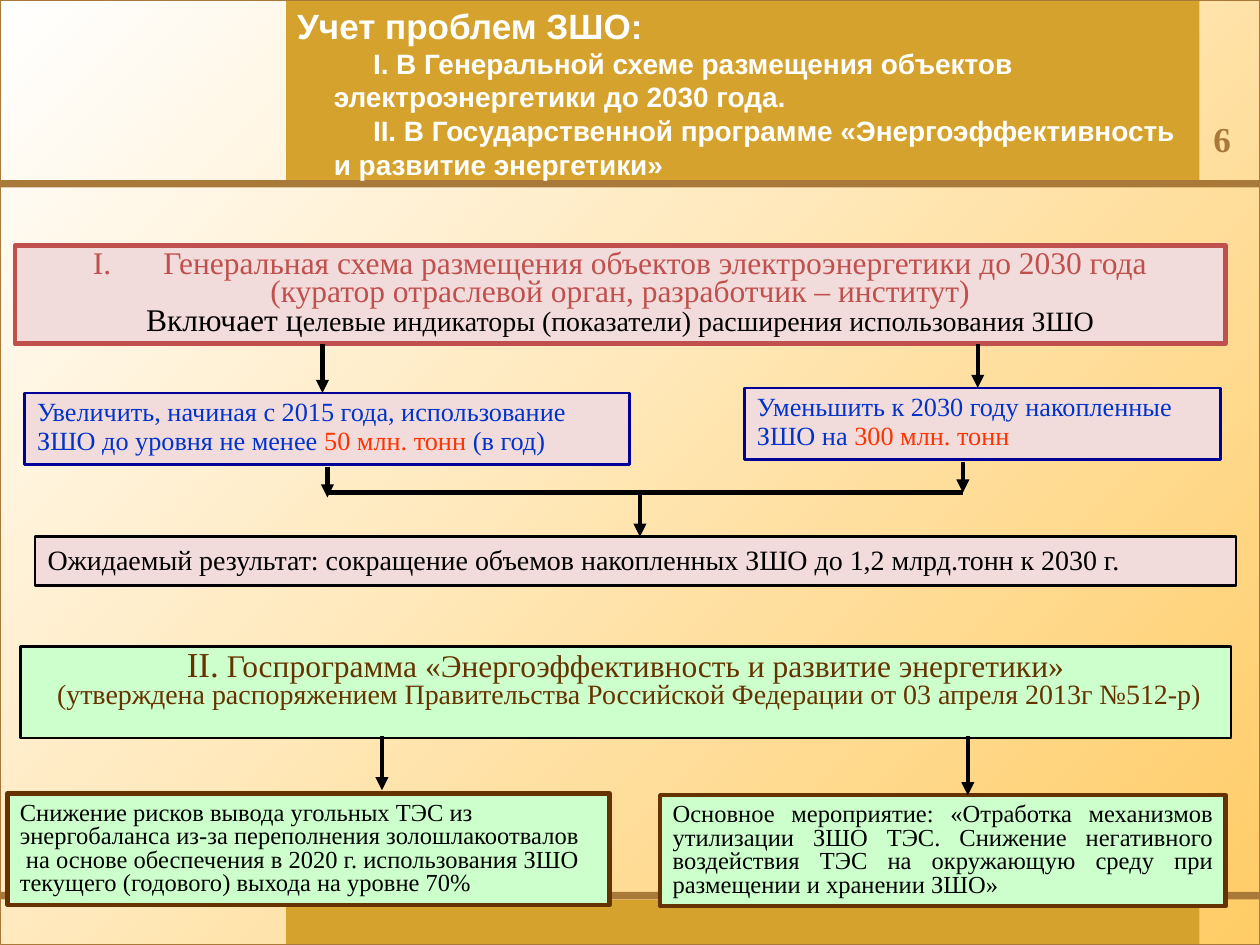
from lxml import etree
from pptx import Presentation
from pptx.dml.color import RGBColor
from pptx.enum.shapes import MSO_CONNECTOR, MSO_SHAPE
from pptx.enum.text import MSO_ANCHOR, MSO_AUTO_SIZE, PP_ALIGN
from pptx.oxml.ns import qn
from pptx.util import Cm, Pt

RECT = MSO_SHAPE.RECTANGLE
LINE = MSO_CONNECTOR.STRAIGHT
TOP, MID = MSO_ANCHOR.TOP, MSO_ANCHOR.MIDDLE
LEFT, MIDST, EVEN = PP_ALIGN.LEFT, PP_ALIGN.CENTER, PP_ALIGN.JUSTIFY

WHITE = RGBColor(0xFF, 0xFF, 0xFF)
BLACK = RGBColor(0x00, 0x00, 0x00)
CREAM = RGBColor(0xFF, 0xCC, 0x66)
GOLD = RGBColor(0xD5, 0xA3, 0x2D)
BRONZE = RGBColor(0xA8, 0x79, 0x38)
PINK = RGBColor(0xF2, 0xDC, 0xDB)
RED = RGBColor(0xC0, 0x50, 0x4D)
NAVY = RGBColor(0x00, 0x00, 0x99)
BLUE = RGBColor(0x00, 0x33, 0xCC)
FLAME = RGBColor(0xFF, 0x33, 0x00)
MINT = RGBColor(0xCC, 0xFF, 0xCC)
BROWN = RGBColor(0x66, 0x33, 0x00)
SERIF = "Times New Roman"

deck = Presentation()
deck.slide_width, deck.slide_height = Cm(25.4), Cm(19.05)
slide = deck.slides.add_slide(deck.slide_layouts[5])
shapes = slide.shapes

back = slide.background.fill
back.gradient()
back.gradient_angle = 315
for stop, hue in zip(back.gradient_stops, (WHITE, CREAM)):
    stop.color.rgb = hue


def add_box(x, y, w, h, fill=None, edge=None, width=0):
    box = shapes.add_shape(RECT, Cm(x), Cm(y), Cm(w), Cm(h))
    box.shadow.inherit = False
    if fill is None:
        box.fill.background()
    else:
        box.fill.solid()
        box.fill.fore_color.rgb = fill
    if edge is None:
        box.line.fill.background()
    else:
        box.line.color.rgb = edge
        box.line.width = Pt(width)
    return box


def add_line(x, y, x2, y2, head=True):
    line = shapes.add_connector(LINE, Cm(x), Cm(y), Cm(x2), Cm(y2))
    line.line.color.rgb = BLACK
    line.line.width = Pt(2.5)
    if head:
        tail = etree.SubElement(line.line._get_or_add_ln(), qn("a:tailEnd"))
        tail.set("type", "triangle")
    etree.SubElement(line._element.spPr, qn("a:effectLst"))


for x, y, w, h, fill in (
    (5.77, 18.14, 18.41, 0.91, GOLD),
    (5.77, 0, 18.41, 3.63, GOLD),
    (0, 3.63, 25.4, 0.15, BRONZE),
    (0, 17.98, 25.4, 0.15, BRONZE),
):
    add_box(x, y, w, h, fill)
add_box(0, 0, 25.4, 19.05, edge=BRONZE, width=0.5)

title = shapes.title
shapes._spTree.append(title._element)
title.left, title.top = Cm(5.79), Cm(0)
title.width, title.height = Cm(18.57), Cm(3.73)
frame = title.text_frame
frame.auto_size = MSO_AUTO_SIZE.NONE
frame.vertical_anchor = MID
frame.margin_left = frame.margin_right = Cm(0.2)
frame.margin_top = frame.margin_bottom = Cm(0.1)
frame.text = "\n".join((
    "Учет проблем ЗШО:",
    "I. В Генеральной схеме размещения объектов электроэнергетики до 2030 года.",
    "II. В Государственной программе «Энергоэффективность и развитие энергетики»",
))
for rank, para in enumerate(frame.paragraphs):
    para.alignment = LEFT
    props = para._p.get_or_add_pPr()
    props.set("marL", str(Cm(0.74)))
    props.set("indent", str(Cm(0.79 if rank else -0.74)))
    font = para.font
    font.name, font.bold = "Arial", True
    font.size = Pt(16 if rank else 20)
    font.color.rgb = WHITE
para.space_after = Pt(6)

boxes = (
    ((0.3, 4.95, 24.41, 1.98), PINK, RED, 2.5, TOP, 0.75, (
        (MIDST, 18, [("Генеральная схема размещения объектов электроэнергетики до 2030 года", RED)]),
        (MIDST, 18, [("(куратор отраслевой орган, разработчик – институт)", RED)]),
        (MIDST, 18, [
            ("Включает ц", BLACK),
            ("елевые индикаторы (показатели) расширения использования ЗШО", BLACK, 16),
        ]),
    )),
    ((0.5, 7.92, 12.19, 1.45), PINK, NAVY, 1.5, TOP, 0.9, (
        (LEFT, 15, [
            ("Увеличить, начиная с 2015 года, использование ЗШО до уровня не менее", BLUE),
            (" 50 млн. тонн ", FLAME),
            ("(в год)", BLUE),
        ]),
    )),
    ((15.01, 7.82, 9.6, 1.45), PINK, NAVY, 1.5, TOP, 0.9, (
        (LEFT, 15, [
            ("Уменьшить к 2030 году накопленные ЗШО на ", BLUE),
            ("300 млн. тонн", FLAME),
        ]),
    )),
    ((0.71, 10.82, 24.21, 0.99), PINK, BLACK, 1.5, TOP, 1.0, (
        (LEFT, 16, [("Ожидаемый результат: сокращение объемов накопленных ЗШО до 1,2 млрд.тонн к 2030 г.", BLACK)]),
    )),
    ((0.41, 13.03, 24.41, 1.85), MINT, BLACK, 1.5, TOP, 0.75, (
        (MIDST, 18, [
            ("II.", BROWN, 20),
            (" Госпрограмма «Энергоэффективность и развитие энергетики»", BROWN),
        ]),
        (MIDST, 16, [(" (утверждена распоряжением Правительства Российской Федерации от 03 апреля 2013г №512-р)", BROWN)]),
    )),
    ((0.15, 16, 12.14, 2.24), MINT, BROWN, 2.5, MID, 0.8, (
        (LEFT, 14, [("Снижение рисков вывода угольных ТЭС из", BLACK)]),
        (EVEN, 14, [("энергобаланса из-за переполнения золошлакоотвалов", BLACK)]),
        (LEFT, 14, [(" на основе обеспечения в 2020 г. использования ЗШО", BLACK)]),
        (LEFT, 14, [("текущего (годового) выхода на уровне 70%", BLACK)]),
    )),
    ((13.31, 16.03, 11.4, 2.24), MINT, BROWN, 2.5, MID, 0.8, (
        (EVEN, 14, [(
            "Основное мероприятие: «Отработка механизмов утилизации ЗШО ТЭС. "
            "Снижение негативного воздействия ТЭС на окружающую среду при "
            "размещении и хранении ЗШО»", BLACK)]),
    )),
)
for place, fill, edge, width, anchor, pitch, paras in boxes:
    frame = add_box(*place, fill, edge, width).text_frame
    frame.word_wrap = True
    frame.vertical_anchor = anchor
    for rank, (align, size, runs) in enumerate(paras):
        para = frame.add_paragraph() if rank else frame.paragraphs[0]
        para.alignment = align
        para.line_spacing = pitch
        if edge == RED and rank == 0:
            props = para._p.get_or_add_pPr()
            props.set("marL", str(Cm(1.42)))
            props.set("indent", str(Cm(-1.42)))
            mark = etree.SubElement(props, qn("a:buAutoNum"))
            mark.set("type", "romanUcPeriod")
        para.font.name = SERIF
        para.font.size = Pt(size)
        for words, hue, *other in runs:
            run = para.add_run()
            run.text = words
            run.font.color.rgb = hue
            if other:
                run.font.size = Pt(other[0])

for x, y, y2 in (
    (6.5, 6.93, 7.92),
    (19.71, 6.93, 7.82),
    (6.6, 9.42, 10.03),
    (19.41, 9.32, 9.93),
    (12.9, 9.93, 10.82),
    (7.7, 14.83, 15.93),
    (19.51, 14.83, 16.03),
):
    add_line(x, y, x, y2)
add_line(6.6, 9.93, 19.41, 9.93, head=False)

page = shapes.add_textbox(Cm(24.21), Cm(2.24), Cm(0.86), Cm(1.12))
para = page.text_frame.paragraphs[0]
para.text = "6"
para.font.name, para.font.size, para.font.bold = SERIF, Pt(20), True
para.font.color.rgb = BRONZE

deck.save("out.pptx")
